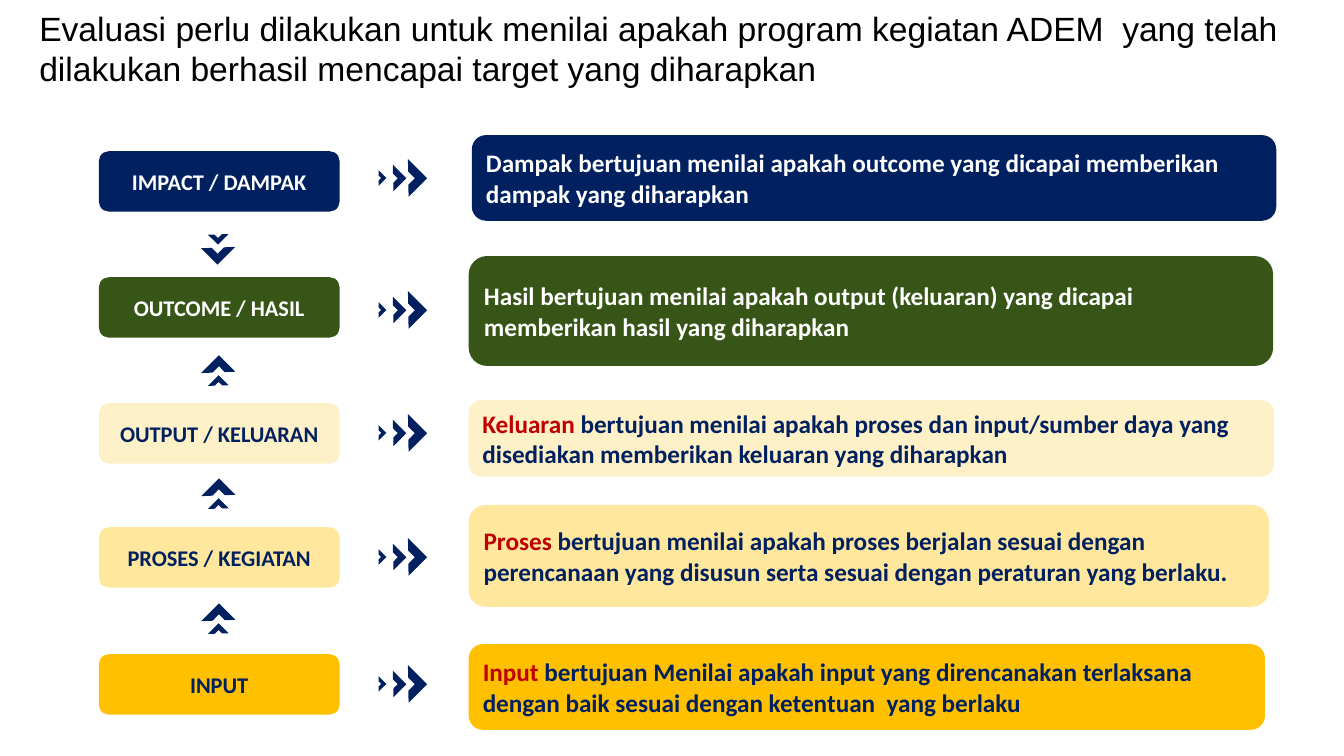
from dataclasses import dataclass

from lxml import etree
from pptx import Presentation
from pptx.dml.color import RGBColor
from pptx.enum.shapes import MSO_SHAPE
from pptx.enum.text import MSO_ANCHOR, PP_ALIGN
from pptx.oxml.ns import qn
from pptx.util import Pt

ROUNDED = MSO_SHAPE.ROUNDED_RECTANGLE
HALF_FRAME = MSO_SHAPE.HALF_FRAME
TOP, MIDDLE = MSO_ANCHOR.TOP, MSO_ANCHOR.MIDDLE
LEFT, CENTER = PP_ALIGN.LEFT, PP_ALIGN.CENTER


@dataclass(frozen=True)
class Theme:
    navy: RGBColor = RGBColor(0x00, 0x20, 0x60)
    green: RGBColor = RGBColor(0x36, 0x55, 0x16)
    gold: RGBColor = RGBColor(0xFF, 0xC0, 0x00)
    red: RGBColor = RGBColor(0xC0, 0x00, 0x00)
    white: RGBColor = RGBColor(0xFF, 0xFF, 0xFF)
    black: RGBColor = RGBColor(0x00, 0x00, 0x00)
    title_font: str = "Arial"
    body_font: str = "Calibri"
    title_size: int = 24
    body_size: int = 18
    label_size: int = 16


THEME = Theme()

TITLE = ("Evaluasi perlu dilakukan untuk menilai apakah program kegiatan ADEM  yang telah "
         "dilakukan berhasil mencapai target yang diharapkan")

# Label, label top, chevron centre, fill, opacity %, text colour,
# description box (left, top, width, height), red keyword, description
LEVELS = [
    ("IMPACT / DAMPAK", 108, 127.1, THEME.navy, 100, THEME.white,
     (337, 96.5, 574.6, 61.2), "",
     "Dampak bertujuan menilai apakah outcome yang dicapai memberikan dampak yang diharapkan"),
    ("OUTCOME / HASIL", 198, 221.4, THEME.green, 100, THEME.white,
     (334.8, 182.9, 574.6, 78.5), "",
     "Hasil bertujuan menilai apakah output (keluaran) yang dicapai memberikan hasil "
     "yang diharapkan"),
    ("OUTPUT / KELUARAN", 288, 309.2, THEME.gold, 22, THEME.navy,
     (334.8, 285.8, 575.3, 54.7), "Keluaran",
     " bertujuan menilai apakah proses dan input/sumber daya yang disediakan memberikan "
     "keluaran yang diharapkan"),
    ("PROSES / KEGIATAN", 376.6, 397.8, THEME.gold, 38, THEME.navy,
     (334.8, 360.7, 571.7, 72.7), "Proses",
     " bertujuan menilai apakah proses berjalan sesuai dengan perencanaan yang disusun "
     "serta sesuai dengan peraturan yang berlaku."),
    ("INPUT", 467.3, 488.5, THEME.gold, 100, THEME.navy,
     (334.8, 460.1, 568.8, 61.2), "Input",
     " bertujuan Menilai apakah input yang direncanakan terlaksana dengan baik sesuai "
     "dengan ketentuan  yang berlaku"),
]

LABEL_LEFT, LABEL_WIDTH, LABEL_HEIGHT = 70.6, 172, 43.2

# Chevrons pointing right: centre x, width, height
RIGHT_CHEVRONS = [(291.6, 18.7, 19.4), (280.8, 13, 13.7), (270.4, 7.9, 7.9)]
RIGHT, DOWN, UP = 135, 225, 45

# Chevron pairs between labels: centre y of the large one, direction
LINKS = [(176.8, DOWN), (266, UP), (353.9, UP), (443.2, UP)]
LINK_X, LINK_GAP = 155.9, 9.4


def fill_shape(shape, color, opacity=100):
    shape.shadow.inherit = False
    shape.line.fill.background()
    shape.fill.solid()
    shape.fill.fore_color.rgb = color
    if opacity < 100:
        color_element = shape.fill._xPr.find(qn("a:solidFill"))[0]
        etree.SubElement(color_element, qn("a:alpha"), val=str(opacity * 1000))


def write_text(shape, parts, font_name, size, bold, alignment, anchor):
    """Write one paragraph from (text, colour) parts."""
    frame = shape.text_frame
    frame.word_wrap = True
    frame.vertical_anchor = anchor
    paragraph = frame.paragraphs[0]
    paragraph.alignment = alignment
    paragraph.font.name = font_name
    paragraph.font.size = Pt(size)
    paragraph.font.bold = bold
    for text, color in parts:
        run = paragraph.add_run()
        run.text = text
        run.font.color.rgb = color


def add_title(slide):
    shape = slide.shapes.add_textbox(Pt(21), Pt(2), Pt(936), Pt(58))
    write_text(shape, [(TITLE, THEME.black)], THEME.title_font, THEME.title_size,
               False, LEFT, TOP)


def add_box(slide, box, fill, opacity, parts, size, alignment):
    shape = slide.shapes.add_shape(ROUNDED, *map(Pt, box))
    fill_shape(shape, fill, opacity)
    write_text(shape, parts, THEME.body_font, size, True, alignment, MIDDLE)


def add_chevron(slide, center_x, center_y, width, height, rotation):
    shape = slide.shapes.add_shape(HALF_FRAME, Pt(center_x - width / 2),
                                   Pt(center_y - height / 2), Pt(width), Pt(height))
    shape.rotation = rotation
    fill_shape(shape, THEME.navy)


def add_level(slide, label, label_top, chevron_y, fill, opacity, color,
              box, keyword, description):
    parts = [(description, color)]
    if keyword:
        parts.insert(0, (keyword, THEME.red))
    add_box(slide, box, fill, opacity, parts, THEME.body_size, LEFT)
    add_box(slide, (LABEL_LEFT, label_top, LABEL_WIDTH, LABEL_HEIGHT), fill, opacity,
            [(label, color)], THEME.label_size, CENTER)
    for center_x, width, height in RIGHT_CHEVRONS:
        add_chevron(slide, center_x, chevron_y, width, height, RIGHT)


def add_link(slide, center_y, direction):
    small_y = center_y + (LINK_GAP if direction == UP else -LINK_GAP)
    add_chevron(slide, LINK_X, center_y, 16.6, 18, direction)
    add_chevron(slide, LINK_X, small_y, 10.1, 10.8, direction)


def main():
    presentation = Presentation()
    presentation.slide_width, presentation.slide_height = Pt(960), Pt(540)
    slide = presentation.slides.add_slide(presentation.slide_layouts[6])

    # Heading
    add_title(slide)

    # Evaluation levels with their descriptions
    for level in LEVELS:
        add_level(slide, *level)

    # Chevron pairs between levels
    for center_y, direction in LINKS:
        add_link(slide, center_y, direction)

    presentation.save("out.pptx")


if __name__ == "__main__":
    main()
